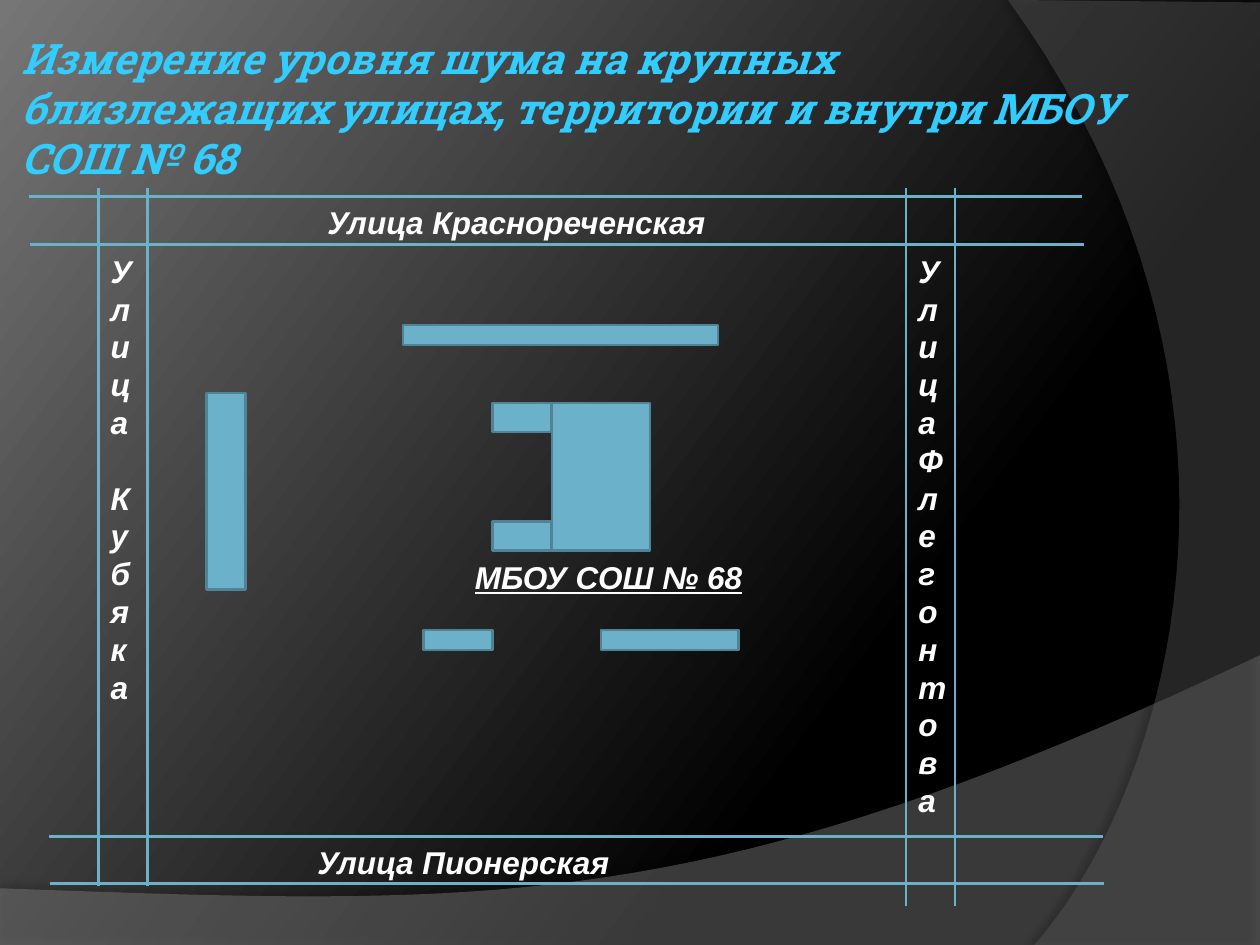
from copy import deepcopy

from lxml.etree import SubElement
from pptx import Presentation
from pptx.dml.color import RGBColor as Rgb
from pptx.enum.shapes import MSO_CONNECTOR as Connector, MSO_SHAPE as Shape
from pptx.enum.text import MSO_ANCHOR as Anchor
from pptx.oxml.ns import qn
from pptx.util import Inches, Pt

COLORS = {
    "black": "000000", "glow": "767676", "wave": "7F7F7F", "arc": "5E5E5E",
    "title": "33CCFF", "label": "FFFFFF", "road": "6BB1C9", "edge": "4F8395",
}
LABEL = {"size": Pt(18), "name": "Arial", "bold": True, "italic": True}
TITLE = {**LABEL, "size": Pt(24), "name": "Roboto Slab"}


def color(name):
    return Rgb.from_string(COLORS[name])


def paint_background(slide):
    fill = slide.background.fill
    fill.gradient()
    fill.gradient_angle = 143
    stop_list = slide.element.find(".//" + qn("a:gsLst"))
    stop_list.append(deepcopy(stop_list[-1]))
    ramp = [(0, "black"), (0.3, "black"), (1, "glow")]
    for stop, (position, name) in zip(fill.gradient_stops, ramp):
        stop.position = position
        stop.color.rgb = color(name)


def bezier(points, steps=40):
    for step in range(1, steps + 1):
        t = step / steps
        weights = ((1 - t) ** 3, 3 * t * (1 - t) ** 2, 3 * t ** 2 * (1 - t), t ** 3)
        yield tuple(sum(w * p[axis] for w, p in zip(weights, points)) for axis in (0, 1))


def add_backdrop(slide, corners, curve, name, opacity, shadow):
    outline = [(Inches(x), Inches(y)) for x, y in [*corners, curve[0], *bezier(curve)]]
    builder = slide.shapes.build_freeform(*outline[0])
    builder.add_line_segments(outline[1:], close=True)
    backdrop = builder.convert_to_shape()
    backdrop.fill.solid()
    backdrop.fill.fore_color.rgb = color(name)
    backdrop.line.fill.background()
    backdrop.shadow.inherit = False
    props = backdrop.element.spPr
    tint = props.find(qn("a:solidFill"))[0]
    SubElement(tint, qn("a:alpha"), val=str(opacity * 1000))
    alpha, blur, distance, angle = shadow
    cast = SubElement(props.find(qn("a:effectLst")), qn("a:outerShdw"),
                      blurRad=str(Pt(blur)), dist=str(Pt(distance)),
                      dir=str(angle * 60000), algn="ctr", rotWithShape="0")
    shade = SubElement(cast, qn("a:srgbClr"), val=COLORS["black"])
    SubElement(shade, qn("a:alpha"), val=str(alpha * 1000))


def add_road_line(slide, x1, y1, x2, y2):
    road = slide.shapes.add_connector(Connector.STRAIGHT, *map(Inches, (x1, y1, x2, y2)))
    road.line.color.rgb = color("road")
    road.line.width = Pt(1.5)
    SubElement(road.element.spPr, qn("a:effectLst"))


def add_building(slide, *box):
    building = slide.shapes.add_shape(Shape.RECTANGLE, *map(Inches, box))
    building.shadow.inherit = False
    building.fill.solid()
    building.fill.fore_color.rgb = color("road")
    building.line.color.rgb = color("edge")
    building.line.width = Pt(1.5)


def add_text(slide, text, box, font=LABEL, name="label", underline=False):
    frame = slide.shapes.add_textbox(*map(Inches, box)).text_frame
    frame.word_wrap = True
    run = frame.paragraphs[0].add_run()
    run.text = text
    for key, value in font.items():
        setattr(run.font, key, value)
    run.font.color.rgb = color(name)
    if underline:
        run.font.underline = True
    return frame


def add_title(slide):
    frame = add_text(
        slide,
        "Измерение уровня шума на крупных близлежащих улицах, территории и внутри МБОУ СОШ № 68",
        (0.12, 0.21, 8.94, 1.29), TITLE, "title")
    margins = {"margin_left": 0.05, "margin_top": 0, "margin_right": 0.05, "margin_bottom": 0}
    for key, value in margins.items():
        setattr(frame, key, Inches(value))
    frame.vertical_anchor = Anchor.MIDDLE


def main():
    deck = Presentation()
    deck.slide_width, deck.slide_height = Inches(10), Inches(7.5)
    slide = deck.slides.add_slide(deck.slide_layouts[6])
    paint_background(slide)
    add_backdrop(slide, [(0, 7.05), (0, 7.51), (10, 7.51)],
                 [(10, 5.2), (5.59, 7.29), (3.91, 7.19), (0, 7.05)],
                 "wave", 45, (35, 4, 3.5, 270))
    add_backdrop(slide, [(10, 0.02), (10, 7.5)],
                 [(8.21, 7.5), (9.35, 6.19), (10.18, 3), (8, 0)],
                 "arc", 40, (45, 4, 4, 180))
    add_title(slide)

    add_building(slide, 4.38, 3.2, 0.78, 1.17)
    for wing_top in (4.14, 3.2):
        add_building(slide, 3.91, wing_top, 0.47, 0.23)
    for left, y in ((0.23, 1.56), (0.24, 1.94), (0.39, 6.64), (0.4, 7.01)):
        add_road_line(slide, left, y, left + 8.36, y)
    for x, bottom in ((0.78, 7.03), (1.17, 7.03), (7.19, 7.19), (7.58, 7.19)):
        add_road_line(slide, x, bottom, x, 1.49)
    for left, top, width in ((3.2, 2.58, 2.5), (3.36, 5, 0.55), (4.77, 5, 1.09)):
        add_building(slide, left, top, width, 0.16)
    add_building(slide, 1.64, 3.12, 0.31, 1.56)

    add_text(slide, "МБОУ СОШ № 68", (3.67, 4.38, 2.42, 0.4), underline=True)
    streets = {
        "Улица Краснореченская": (2.5, 1.56, 3.36, 0.4),
        "Улица Пионерская": (2.42, 6.64, 3.67, 0.4),
        "Улица Кубяка": (0.78, 1.95, 0.31, 3.74),
        "Улица Флегонтова": (7.19, 1.95, 0.39, 4.64),
    }
    for street, box in streets.items():
        add_text(slide, street, box)
    deck.save("out.pptx")


if __name__ == "__main__":
    main()
